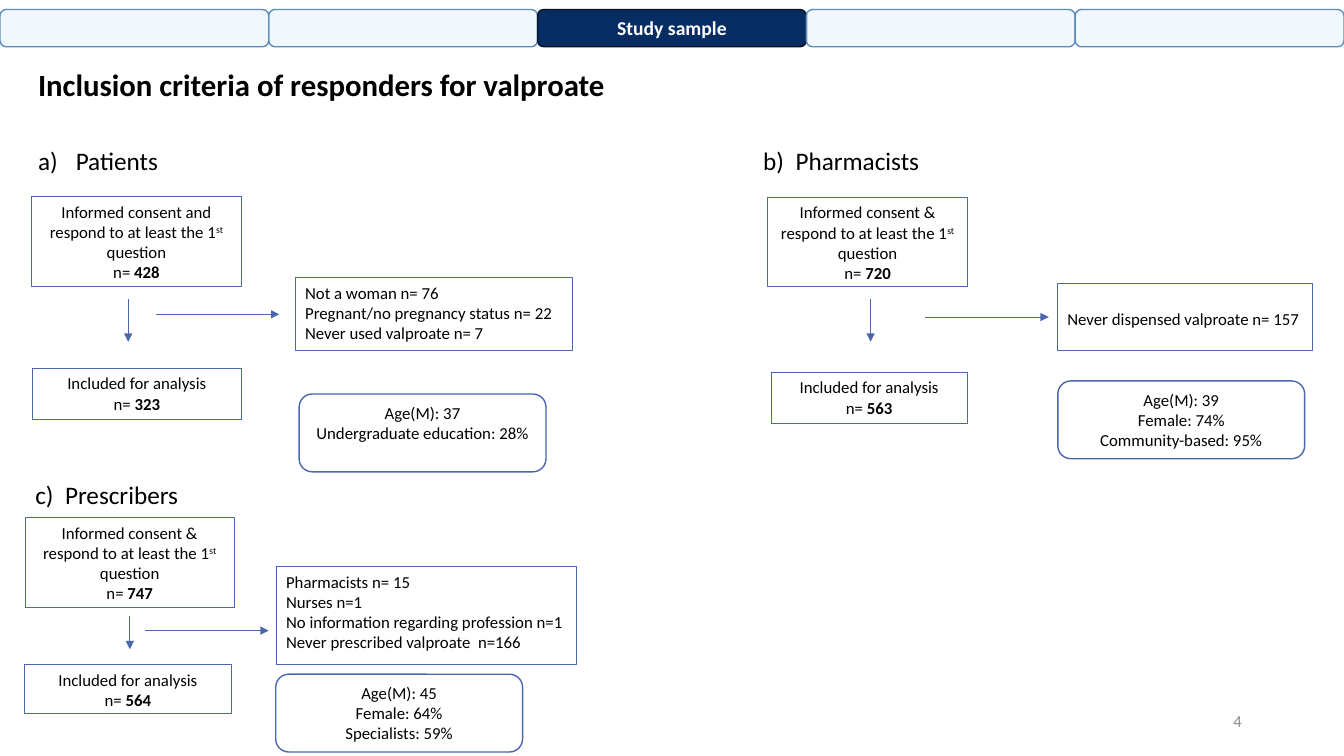
"""Build the slide on inclusion criteria of responders for valproate."""
from dataclasses import dataclass

from lxml.etree import SubElement
from pptx import Presentation
from pptx.dml.color import RGBColor
from pptx.enum.shapes import MSO_CONNECTOR, MSO_SHAPE
from pptx.enum.text import MSO_ANCHOR, PP_ALIGN
from pptx.oxml.ns import qn
from pptx.util import Cm, Pt


@dataclass(frozen=True)
class Theme:
    """Colours, font and type sizes of the slide."""
    font: str = "Calibri"
    ink: str = "000000"
    muted: str = "8C8C8C"
    white: str = "FFFFFF"
    flow: str = "4A66AC"
    tab: str = "BAD8F7"
    tab_line: str = "5B8EBD"
    active: str = "072C62"
    active_line: str = "031227"
    title: int = 22
    heading: int = 18
    tab_size: int = 14
    body: int = 12


@dataclass(frozen=True)
class Flow:
    """One group of responders: wording, then places in centimetres."""
    heading: str
    consent: str
    responders: int
    exclusions: list
    included: int
    profile: list
    heading_at: tuple
    heading_indent: float
    consent_at: tuple
    down_at: tuple
    down_length: float
    right_at: tuple
    exclusions_at: tuple
    included_at: tuple
    profile_at: tuple
    exclusions_top: float = 0.13
    profile_bottom: float = 0.13


THEME = Theme()
WIDTH, HEIGHT = 33.87, 19.05
TAB_COUNT, ACTIVE_TAB = 5, 2
HEADING_SIZE = (8.2, 1.02)
PROFILE_SIZE = (6.22, 1.96)
RIGHT_LENGTH = 3.11

FLOWS = [
    Flow("Patients", "Informed consent and", 428,
         ["Not a woman n= 76", "Pregnant/no pregnancy status n= 22",
          "Never used valproate n= 7"],
         323, ["Age(M): 37", "Undergraduate education: 28%"],
         (0.71, 3.53), 0.95, (0.79, 4.95, 5.3, 2.26), (3.23, 7.54), 1.07,
         (3.93, 7.92), (7.44, 6.99, 6.99, 1.85), (0.81, 9.28, 5.28, 1.3),
         (7.54, 9.93), profile_bottom=0.64),
    Flow("Pharmacists", "Informed consent &", 720,
         ["Never dispensed valproate n= 157"],
         563, ["Age(M): 39", "Female: 74%", "Community-based: 95%"],
         (18.98, 3.53), 0.82, (19.35, 4.97, 5.03, 2.25), (21.94, 7.54), 1.07,
         (23.32, 7.99), (26.65, 7.14, 6.43, 1.68), (19.43, 9.38, 4.95, 1.3),
         (26.66, 9.6), exclusions_top=0.64),
    Flow("Prescribers", "Informed consent &", 747,
         ["Pharmacists n= 15", "Nurses n=1",
          "No information regarding profession n=1",
          "Never prescribed valproate  n=166"],
         564, ["Age(M): 45", "Female: 64%", "Specialists: 59%"],
         (0.64, 11.95), 0.75, (0.64, 13.04, 5.26, 2.26), (3.27, 15.52), 0.84,
         (3.66, 15.89), (6.96, 14.27, 7.57, 2.47), (0.61, 16.74, 5.23, 1.23),
         (6.95, 16.99)),
]


def write(frame, lines, size, color=THEME.ink, align=PP_ALIGN.LEFT,
          anchor=MSO_ANCHOR.TOP, bold=None):
    """Fill a text frame; a line is a string or a list of (text, style) runs."""
    frame.word_wrap = True
    frame.vertical_anchor = anchor
    for index, line in enumerate(lines):
        paragraph = frame.add_paragraph() if index else frame.paragraphs[0]
        paragraph.alignment = align
        paragraph.font.name = THEME.font
        paragraph.font.size = Pt(size)
        paragraph.font.bold = bold
        paragraph.font.color.rgb = RGBColor.from_string(color)
        for text, style in [(line, "")] if isinstance(line, str) else line:
            run = paragraph.add_run()
            run.text = text
            if style == "bold":
                run.font.bold = True
            elif style == "super":
                run.font._element.set("baseline", "30000")


def add_label(slide, at, text, size, **style):
    """Add a text box with one line and return its paragraph."""
    frame = slide.shapes.add_textbox(*map(Cm, at)).text_frame
    write(frame, [text], size, **style)
    return frame.paragraphs[0]


def add_heading(slide, at, text, number, indent):
    """Add a lettered group heading with a hanging indent."""
    properties = add_label(slide, at, text, THEME.heading)._p.get_or_add_pPr()
    properties.set("marL", str(Cm(indent)))
    properties.set("indent", str(-Cm(indent)))
    numbering = {"type": "alphaLcParenR", "startAt": str(number)}
    properties.insert(0, SubElement(properties, qn("a:buAutoNum"), numbering))


def add_box(slide, at, line, line_width, kind=MSO_SHAPE.RECTANGLE, fill=None):
    """Add an outlined box without shadow."""
    box = slide.shapes.add_shape(kind, *map(Cm, at))
    box.shadow.inherit = False
    box.line.color.rgb = RGBColor.from_string(line)
    box.line.width = Pt(line_width)
    if fill:
        box.fill.solid()
        box.fill.fore_color.rgb = RGBColor.from_string(fill)
    else:
        box.fill.background()
    return box


def add_arrow(slide, start, across=0, down=0):
    """Add a straight arrow that runs from start by the given lengths."""
    x, y = start
    arrow = slide.shapes.add_connector(
        MSO_CONNECTOR.STRAIGHT, Cm(x), Cm(y), Cm(x + across), Cm(y + down))
    arrow.line.color.rgb = RGBColor.from_string(THEME.flow)
    arrow.line.width = Pt(0.5)
    SubElement(arrow.line._get_or_add_ln(), qn("a:tailEnd"), type="triangle")
    SubElement(arrow._element.spPr, qn("a:effectLst"))


def add_tabs(slide):
    """Add the row of section tabs with the current one highlighted."""
    pitch = WIDTH / TAB_COUNT
    for index in range(TAB_COUNT):
        active = index == ACTIVE_TAB
        tab = add_box(slide, (index * pitch, 0.24, pitch, 0.94),
                      THEME.active_line if active else THEME.tab_line, 1,
                      MSO_SHAPE.ROUNDED_RECTANGLE,
                      THEME.active if active else THEME.tab)
        if active:
            write(tab.text_frame, ["Study sample"], THEME.tab_size, THEME.white,
                  PP_ALIGN.CENTER, MSO_ANCHOR.MIDDLE, True)
        else:
            color = tab.fill._xPr.find(qn("a:solidFill"))[0]
            SubElement(color, qn("a:alpha"), val="20000")


def add_flow(slide, flow, number):
    """Add the heading, boxes and arrows of one group of responders."""
    add_heading(slide, flow.heading_at + HEADING_SIZE, flow.heading, number,
                flow.heading_indent)
    consent = [(flow.consent + " respond to at least the 1", ""),
               ("st", "super"), (" question", "")]
    for at, lead, count in ((flow.consent_at, consent, flow.responders),
                            (flow.included_at, "Included for analysis", flow.included)):
        box = add_box(slide, at, THEME.flow, 0.5)
        write(box.text_frame, [lead, [("n= ", ""), (str(count), "bold")]],
              THEME.body, align=PP_ALIGN.CENTER)
    add_arrow(slide, flow.down_at, down=flow.down_length)
    add_arrow(slide, flow.right_at, across=RIGHT_LENGTH)
    exclusions = add_box(slide, flow.exclusions_at, THEME.flow, 0.5).text_frame
    exclusions.margin_top = Cm(flow.exclusions_top)
    write(exclusions, flow.exclusions, THEME.body)
    profile = add_box(slide, flow.profile_at + PROFILE_SIZE, THEME.flow, 1,
                      MSO_SHAPE.ROUNDED_RECTANGLE, THEME.white).text_frame
    profile.margin_bottom = Cm(flow.profile_bottom)
    write(profile, flow.profile, THEME.body, align=PP_ALIGN.CENTER,
          anchor=MSO_ANCHOR.MIDDLE)


def main():
    """Build the slide and save it."""
    deck = Presentation()
    deck.slide_width, deck.slide_height = Cm(WIDTH), Cm(HEIGHT)
    slide = deck.slides.add_slide(deck.slide_layouts[6])
    title = add_label(slide, (0.71, 1.32, 30.84, 1.73),
                      "Inclusion criteria of responders for valproate",
                      THEME.title, anchor=MSO_ANCHOR.MIDDLE, bold=True)
    title.line_spacing = 0.9
    add_label(slide, (23.93, 17.65, 7.62, 1.02), "4", THEME.body,
              color=THEME.muted, align=PP_ALIGN.RIGHT, anchor=MSO_ANCHOR.MIDDLE)
    for number, flow in enumerate(FLOWS, start=1):
        add_flow(slide, flow, number)
    add_tabs(slide)
    deck.save("out.pptx")


if __name__ == "__main__":
    main()
